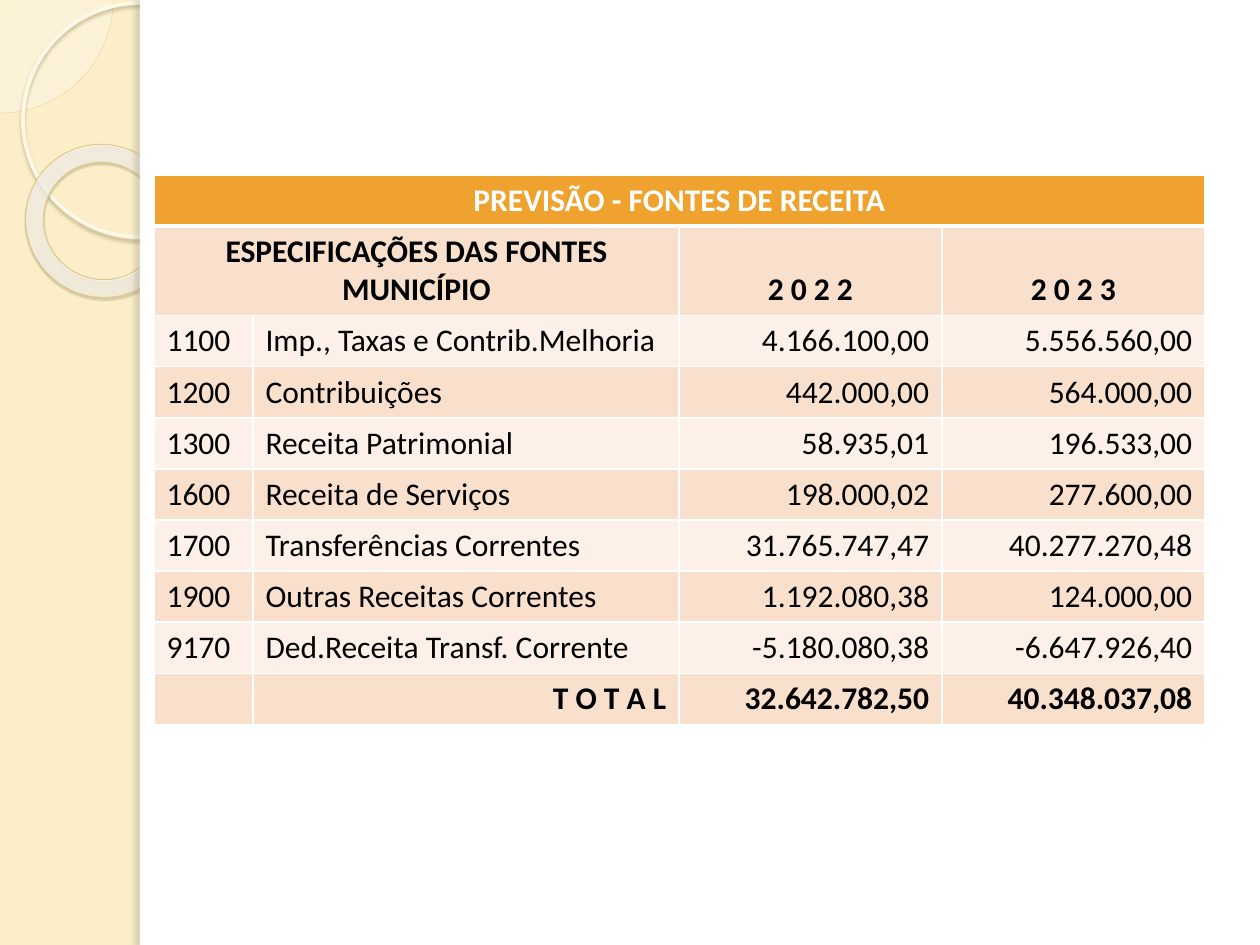
from dataclasses import dataclass

from lxml import etree
from pptx import Presentation
from pptx.dml.color import RGBColor
from pptx.enum.shapes import MSO_SHAPE
from pptx.enum.text import MSO_ANCHOR, PP_ALIGN
from pptx.oxml.ns import qn
from pptx.util import Emu, Pt

EMU_PER_PX = 914400 / 126
FONT = "Calibri"

PIE, ELLIPSE, DONUT, RECTANGLE = (
    MSO_SHAPE.PIE, MSO_SHAPE.OVAL, MSO_SHAPE.DONUT, MSO_SHAPE.RECTANGLE)
LEFT, CENTER, RIGHT = PP_ALIGN.LEFT, PP_ALIGN.CENTER, PP_ALIGN.RIGHT
BOTTOM = MSO_ANCHOR.BOTTOM

WHITE = RGBColor(0xFF, 0xFF, 0xFF)
BLACK = RGBColor(0x00, 0x00, 0x00)
CREAM = RGBColor(0xFB, 0xEE, 0xC9)
IVORY = RGBColor(0xFF, 0xFC, 0xF6)
SAND = RGBColor(0xEC, 0xD6, 0x97)
RING_LINE = RGBColor(0xFF, 0xF8, 0xE7)
DONUT_LINE = RGBColor(0xE1, 0xCA, 0x89)
RING_SHADOW = RGBColor(0xC3, 0xB5, 0x8B)
DONUT_SHADOW = RGBColor(0x65, 0x5C, 0x41)
PANEL_SHADOW = RGBColor(0x7E, 0x77, 0x63)
ORANGE = RGBColor(0xF0, 0xA2, 0x2E)
PEACH = RGBColor(0xF9, 0xE0, 0xCD)
PALE_PEACH = RGBColor(0xFC, 0xF0, 0xE8)


@dataclass
class Shadow:
    color: RGBColor
    alpha: int
    blur: float
    distance: float
    direction: int


@dataclass
class Decoration:
    kind: MSO_SHAPE
    box: tuple[int, int, int, int]
    fill: RGBColor | None = None
    alpha: int = 100
    line: RGBColor | None = None
    line_width: float = 0
    shadow: Shadow | None = None
    adjustments: tuple[float, ...] = ()
    rotation: float = 0


@dataclass
class Source:
    code: str
    name: str
    first_year: str
    second_year: str


DONUT_RING = Decoration(
    DONUT, (25, 145, 155, 152), line=DONUT_LINE, line_width=0.58,
    shadow=Shadow(DONUT_SHADOW, 35, 1, 1.2, 75), adjustments=(0.118,), rotation=38.6)
DONUT_STOPS = (
    (0, RGBColor(0xFF, 0xFD, 0xF8), 70),
    (70, RGBColor(0xFF, 0xFE, 0xFC), 55),
    (100, RGBColor(0xFF, 0xE2, 0x90), 60),
)
BACK_DECORATIONS = (
    Decoration(PIE, (-113, -113, 226, 226), IVORY, 33, SAND, 0.25, adjustments=(0, 54)),
    Decoration(ELLIPSE, (23, 3, 234, 234), line=RING_LINE, line_width=2.15,
               shadow=Shadow(RING_SHADOW, 85, 2, 2, 90)),
)
PANELS = (
    Decoration(RECTANGLE, (140, 0, 1120, 945), WHITE),
    Decoration(RECTANGLE, (140, 0, 10, 945), WHITE,
               shadow=Shadow(PANEL_SHADOW, 25, 3, 3, 180)),
)

SOURCES = (
    Source("1100", "Imp., Taxas e Contrib.Melhoria", "4.166.100,00", "5.556.560,00"),
    Source("1200", "Contribuições", "442.000,00", "564.000,00"),
    Source("1300", "Receita Patrimonial", "58.935,01", "196.533,00"),
    Source("1600", "Receita de Serviços", "198.000,02", "277.600,00"),
    Source("1700", "Transferências Correntes", "31.765.747,47", "40.277.270,48"),
    Source("1900", "Outras Receitas Correntes", "1.192.080,38", "124.000,00"),
    Source("9170", "Ded.Receita Transf. Corrente", "-5.180.080,38", "-6.647.926,40"),
    Source("", "T O T A L", "32.642.782,50", "40.348.037,08"),
)
COLUMN_WIDTHS = (99, 426, 263, 263)
ROW_HEIGHTS = (51, 89) + (51,) * len(SOURCES)


def px(length: int) -> Emu:
    return Emu(round(length * EMU_PER_PX))


def add_element(parent, tag: str, **attributes):
    values = {name: str(value) for name, value in attributes.items()}
    return etree.SubElement(parent, qn(tag), values)


def add_color(parent, color: RGBColor, alpha: int) -> None:
    node = add_element(parent, "a:srgbClr", val=color)
    add_element(node, "a:alpha", val=alpha * 1000)


def add_decoration(slide, item: Decoration):
    shape = slide.shapes.add_shape(item.kind, *map(px, item.box))
    shape.rotation = item.rotation
    for index, value in enumerate(item.adjustments):
        shape.adjustments[index] = value
    if item.fill is None:
        shape.fill.background()
    else:
        shape.fill.solid()
        shape.fill.fore_color.rgb = item.fill
        color = shape.fill._xPr.find(qn("a:solidFill"))[0]
        add_element(color, "a:alpha", val=item.alpha * 1000)
    if item.line is None:
        shape.line.fill.background()
    else:
        shape.line.color.rgb = item.line
        shape.line.width = Pt(item.line_width)
    shape.shadow.inherit = False
    if item.shadow:
        effects = shape._element.spPr.find(qn("a:effectLst"))
        outer = add_element(
            effects, "a:outerShdw", blurRad=Pt(item.shadow.blur),
            dist=Pt(item.shadow.distance), dir=item.shadow.direction * 60000,
            algn="tl", rotWithShape=0)
        add_color(outer, item.shadow.color, item.shadow.alpha)
    return shape


def set_radial_gradient(shape) -> None:
    properties = shape._element.spPr
    gradient = etree.Element(qn("a:gradFill"), {"rotWithShape": "1"})
    stops = add_element(gradient, "a:gsLst")
    for position, color, alpha in DONUT_STOPS:
        add_color(add_element(stops, "a:gs", pos=position * 1000), color, alpha)
    circle = add_element(gradient, "a:path", path="circle")
    add_element(circle, "a:fillToRect", l=-408000, t=-50000, r=508000, b=150000)
    properties.replace(properties.find(qn("a:noFill")), gradient)


def style_cell(cell, fill: RGBColor, top: int = 1, bottom: int = 1) -> None:
    """Fill the cell and give it white borders, with widths in points."""
    cell.fill.solid()
    cell.fill.fore_color.rgb = fill
    properties = cell._tc.get_or_add_tcPr()
    sides = (("a:lnL", 1), ("a:lnR", 1), ("a:lnT", top), ("a:lnB", bottom))
    for index, (tag, width) in enumerate(sides):
        border = etree.Element(qn(tag), {"w": str(Pt(width))})
        add_color(add_element(border, "a:solidFill"), WHITE, 100)
        properties.insert(index, border)


def write_text(cell, text: str, *, align=LEFT, bold=False, color=BLACK) -> None:
    frame = cell.text_frame
    for index, line in enumerate(text.split("\n")):
        para = frame.add_paragraph() if index else frame.paragraphs[0]
        para.alignment = align
        para.font.size = Pt(18)
        if line:
            span = para.add_run()
            span.text = line
            span.font.name = FONT
            span.font.size = Pt(18)
            span.font.bold = bold
            span.font.color.rgb = color


def add_revenue_table(slide) -> None:
    frame = slide.shapes.add_table(
        len(ROW_HEIGHTS), len(COLUMN_WIDTHS), px(154), px(175),
        px(sum(COLUMN_WIDTHS)), px(sum(ROW_HEIGHTS)))
    table = frame.table
    table.first_row = table.horz_banding = False
    for column, width in zip(table.columns, COLUMN_WIDTHS):
        column.width = px(width)
    for index, (row, height) in enumerate(zip(table.rows, ROW_HEIGHTS)):
        row.height = px(height)
        fill = PEACH if index % 2 else PALE_PEACH
        for cell in row.cells:
            style_cell(cell, fill if index else ORANGE,
                       top=3 if index == 1 else 1, bottom=1 if index else 3)

    table.cell(0, 0).merge(table.cell(0, 3))
    table.cell(1, 0).merge(table.cell(1, 1))
    write_text(table.cell(0, 0), "PREVISÃO - FONTES DE RECEITA",
               align=CENTER, bold=True, color=WHITE)
    write_text(table.cell(1, 0), "ESPECIFICAÇÕES DAS FONTES\nMUNICÍPIO",
               align=CENTER, bold=True)
    for column, year in enumerate(("2 0 2 2", "2 0 2 3"), start=2):
        cell = table.cell(1, column)
        cell.vertical_anchor = BOTTOM
        write_text(cell, year, align=CENTER, bold=True)

    for row, source in enumerate(SOURCES, start=2):
        is_total = not source.code
        texts = (source.code, source.name, source.first_year, source.second_year)
        aligns = (LEFT, RIGHT if is_total else LEFT, RIGHT, RIGHT)
        for column, (text, align) in enumerate(zip(texts, aligns)):
            write_text(table.cell(row, column), text, align=align, bold=is_total)


def main() -> None:
    deck = Presentation()
    deck.slide_width, deck.slide_height = px(1260), px(945)
    slide = deck.slides.add_slide(deck.slide_layouts[6])
    slide.background.fill.solid()
    slide.background.fill.fore_color.rgb = CREAM
    for item in BACK_DECORATIONS:
        add_decoration(slide, item)
    set_radial_gradient(add_decoration(slide, DONUT_RING))
    for item in PANELS:
        add_decoration(slide, item)
    add_revenue_table(slide)
    deck.save("out.pptx")


if __name__ == "__main__":
    main()
